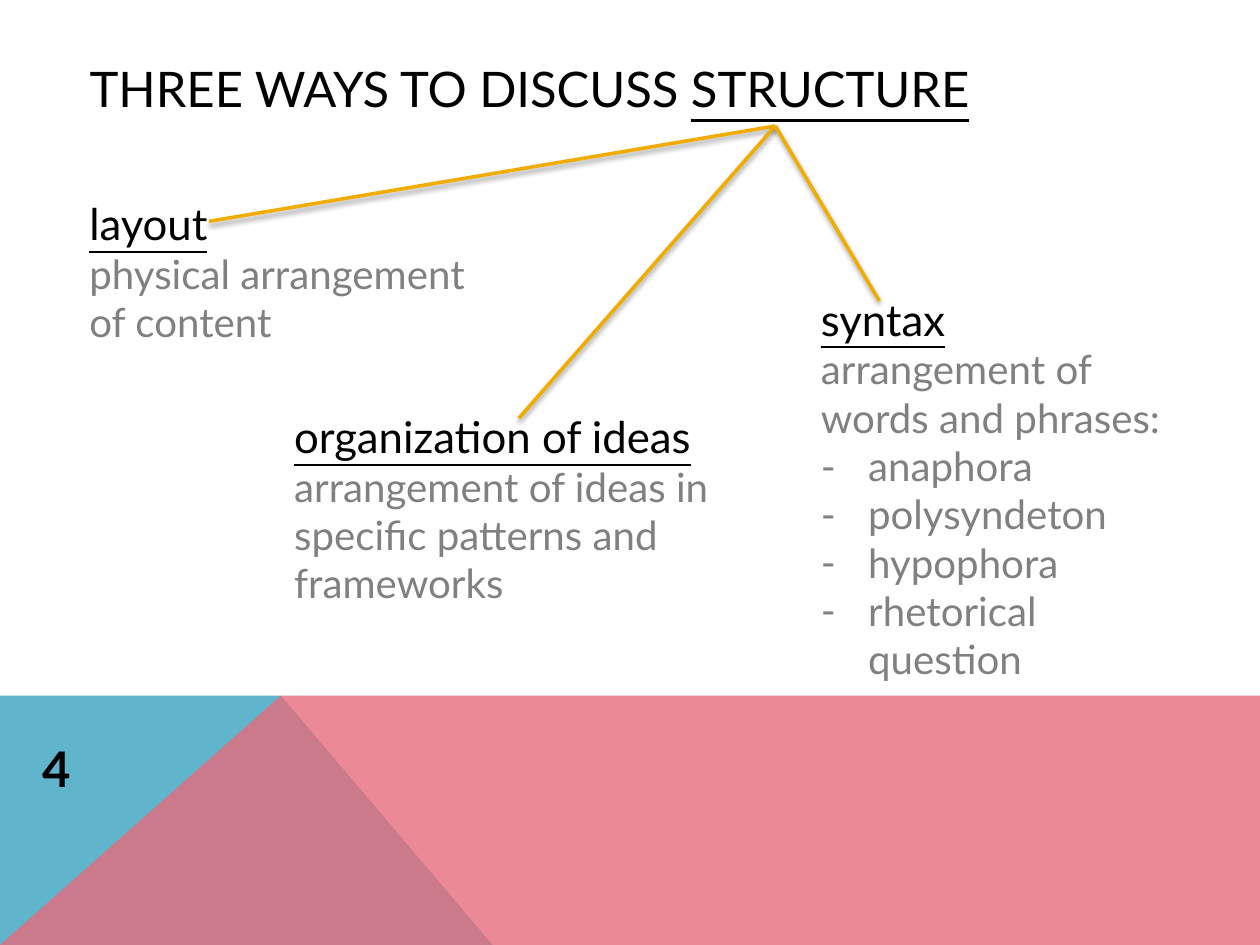
from dataclasses import dataclass

from lxml import etree
from pptx import Presentation
from pptx.dml.color import RGBColor
from pptx.enum.shapes import MSO_CONNECTOR
from pptx.enum.text import MSO_ANCHOR, MSO_AUTO_SIZE, PP_ALIGN
from pptx.oxml.ns import qn
from pptx.util import Pt

STRAIGHT = MSO_CONNECTOR.STRAIGHT
MIDDLE = MSO_ANCHOR.MIDDLE
LEFT = PP_ALIGN.LEFT
GROW, FIXED = MSO_AUTO_SIZE.SHAPE_TO_FIT_TEXT, MSO_AUTO_SIZE.NONE


@dataclass(frozen=True)
class Theme:
    font: str = "Lato"
    ink: str = "000000"
    muted: str = "808080"
    branch: str = "F0AD00"
    blue: str = "60B5CC"
    pink: str = "E66C7D"
    title_size: float = 28
    heading_size: float = 25
    body_size: float = 23
    branch_width: float = 2
    hanging: float = 27


@dataclass(frozen=True)
class Box:
    left: float
    top: float
    width: float
    height: float

    def lengths(self):
        return [Pt(n) for n in (self.left, self.top, self.width, self.height)]


THEME = Theme()


def add_span(para, text, size=THEME.body_size, color=THEME.muted, bold=False, underline=False):
    span = para.add_run()
    span.text = text
    font = span.font
    font.name, font.size = THEME.font, Pt(size)
    font.bold, font.underline = bold, underline
    font.color.rgb = RGBColor.from_string(color)


def add_dash(para):
    properties = para._p.get_or_add_pPr()
    properties.set("marL", str(Pt(THEME.hanging)))
    properties.set("indent", str(-Pt(THEME.hanging)))
    etree.SubElement(properties, qn("a:buFont"), typeface=THEME.font)
    etree.SubElement(properties, qn("a:buChar"), char="-")


def add_text_frame(page, box):
    frame = page.shapes.add_textbox(*box.lengths()).text_frame
    frame.word_wrap = True
    frame.auto_size = GROW
    return frame


def set_title(page, box, lead, keyword):
    title = page.shapes.title
    title.left, title.top, title.width, title.height = box.lengths()
    frame = title.text_frame
    frame.auto_size = FIXED
    frame.vertical_anchor = MIDDLE
    para = frame.paragraphs[0]
    para.alignment = LEFT
    add_span(para, lead, size=THEME.title_size, color=THEME.ink)
    add_span(para, keyword, size=THEME.title_size, color=THEME.ink, underline=True)


def add_way(page, box, heading, description, examples=()):
    frame = add_text_frame(page, box)
    add_span(frame.paragraphs[0], heading, size=THEME.heading_size, color=THEME.ink, underline=True)
    add_span(frame.add_paragraph(), description)
    for example in examples:
        para = frame.add_paragraph()
        add_dash(para)
        add_span(para, example)


def add_branch(page, start, end):
    line = page.shapes.add_connector(STRAIGHT, *[Pt(n) for n in start + end])
    line.line.color.rgb = RGBColor.from_string(THEME.branch)
    line.line.width = Pt(THEME.branch_width)
    effects = etree.SubElement(line._element.spPr, qn("a:effectLst"))
    shadow = etree.SubElement(
        effects, qn("a:outerShdw"), blurRad=str(Pt(3.1)), dist=str(Pt(1.6)),
        dir="5400000", rotWithShape="0",
    )
    color = etree.SubElement(shadow, qn("a:srgbClr"), val=THEME.ink)
    etree.SubElement(color, qn("a:alpha"), val="38000")


def add_polygon(page, points, color, opacity=100):
    (first_x, first_y), *others = points
    builder = page.shapes.build_freeform(Pt(first_x), Pt(first_y))
    builder.add_line_segments([(Pt(x), Pt(y)) for x, y in others], close=True)
    shape = builder.convert_to_shape()
    shape.shadow.inherit = False
    shape.line.fill.background()
    shape.fill.solid()
    shape.fill.fore_color.rgb = RGBColor.from_string(color)
    if opacity < 100:
        color_element = shape._element.spPr.find(qn("a:solidFill"))[0]
        etree.SubElement(color_element, qn("a:alpha"), val=str(opacity * 1000))


def add_footer_band(page, box, number):
    right, bottom = box.left + box.width, box.top + box.height
    corner = (box.left, bottom)
    peak = (box.left + 160.5, box.top)
    add_polygon(page, [corner, (box.left, box.top), peak, (box.left + 281.5, bottom)], THEME.blue)
    add_polygon(page, [corner, peak, (right, box.top), (right, bottom)], THEME.pink, opacity=80)
    frame = add_text_frame(page, Box(box.left + 17, box.top + 21, 48, 41))
    add_span(frame.paragraphs[0], number, size=THEME.title_size, color=THEME.ink, bold=True)


def main():
    deck = Presentation()
    deck.slide_width, deck.slide_height = Pt(720), Pt(540)
    page = deck.slides.add_slide(deck.slide_layouts.get_by_name("Title Only"))

    add_footer_band(page, Box(0, 397.5, 720, 142.5), "4")
    set_title(page, Box(44, 29, 613, 43), "THREE WAYS TO DISCUSS ", "STRUCTURE")

    ways = [
        (Box(44, 109, 230, 94), (119.5, 126.5), "layout", "physical arrangement of content", ()),
        (Box(161, 230.5, 281.5, 121), (296.5, 239), "organization of ideas",
         "arrangement of ideas in specific patterns and frameworks", ()),
        (Box(462, 163.5, 223, 204.5), (502.5, 172), "syntax", "arrangement of words and phrases:",
         ("anaphora", "polysyndeton", "hypophora", "rhetorical question")),
    ]
    for box, branch_end, heading, description, examples in ways:
        add_way(page, box, heading, description, examples)
        add_branch(page, (443, 72), branch_end)

    deck.save("out.pptx")


if __name__ == "__main__":
    main()
